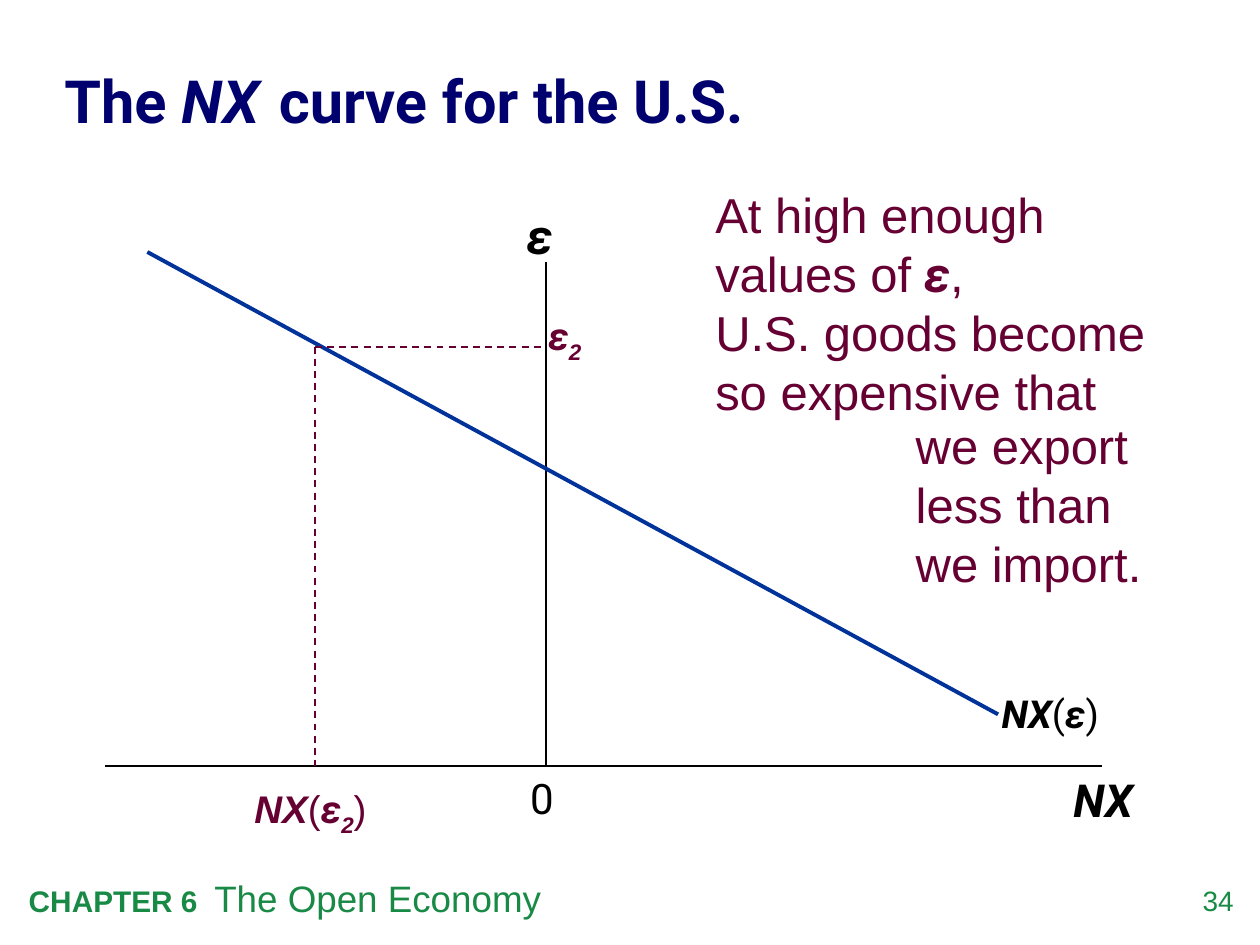
from pptx import Presentation, util as u
from pptx.dml.color import RGBColor
from pptx.enum import dml, shapes, text
from pptx.oxml import ns
from lxml import etree

INK = {"title": "00006E", "foot": "198A46", "axis": "000000",
       "curve": "003399", "mark": "660033"}
HEAD, BODY = "Roboto", "Arial"


def style(para, runs, size, ink, face):
    """Fill a paragraph with (text, marks, face, size) runs, the last two optional."""
    font = para.font
    font.size, font.name = u.Pt(size), face
    font.color.rgb = RGBColor.from_string(INK[ink])
    for words, marks, *rest in runs:
        if words == "\n":
            para.add_line_break()
            continue
        run = para.add_run()
        run.text = words
        run.font.bold, run.font.italic = "b" in marks, "i" in marks
        if rest:
            run.font.name = rest[0]
        if len(rest) > 1:
            run.font.size = u.Pt(rest[1])
        if "s" in marks:
            run._r.get_or_add_rPr().set("baseline", "-25000")


def label(slide, box, runs, size, ink, face=HEAD):
    """Add a wrapped text box and return it."""
    shape = slide.shapes.add_textbox(*map(u.Cm, box))
    shape.text_frame.word_wrap = True
    style(shape.text_frame.paragraphs[0], runs, size, ink, face)
    return shape


def line(slide, start, end, ink, width=1, dash=False):
    """Join two points with a straight line."""
    link = slide.shapes.add_connector(
        shapes.MSO_CONNECTOR.STRAIGHT, *map(u.Cm, (*start, *end)))
    link.line.color.rgb = RGBColor.from_string(INK[ink])
    link.line.width = u.Pt(width)
    if dash:
        link.line.dash_style = dml.MSO_LINE.DASH
    etree.SubElement(link._element.spPr, ns.qn("a:effectLst"))


def head(slide, box):
    """Place the slide title."""
    title = slide.shapes.title
    title.left, title.top, title.width, title.height = map(u.Cm, box)
    frame = title.text_frame
    frame.margin_left = frame.margin_right = 0
    frame.margin_top = frame.margin_bottom = 0
    frame.vertical_anchor = text.MSO_ANCHOR.MIDDLE
    frame.auto_size = text.MSO_AUTO_SIZE.NONE
    para = frame.paragraphs[0]
    para.alignment, para.line_spacing = text.PP_ALIGN.LEFT, 1.05
    style(para, [("The ", "b"), ("NX ", "bi"), (" ", "b", HEAD, 11),
                 ("curve for the U.S.", "b")], 34, "title", HEAD)


def graph(slide, box):
    """Draw the axes, the curve, the marked point and their labels."""
    left, top, wide, high = box

    def at(x, y):
        """Shift a point into the box."""
        return left + x, top + y

    mid, px, py = 8.88, 4.23, 2.97
    line(slide, at(0, high), at(wide, high), "axis")
    line(slide, at(mid, 1.27), at(mid, high), "axis")
    line(slide, at(0.85, 1.06), at(18, 10.38), "curve", 2.25)
    for end in ((mid, py), (px, high)):
        line(slide, at(px, py), at(*end), "mark", dash=True)

    eps, two = ("ε", "bi", HEAD), ("2", "bis", BODY)
    for x, y, w, h, runs, size, ink, face in (
            (8.32, high, 1.27, 1.27, [("0", "")], 24, "axis", HEAD),
            (19.27, high, 1.9, 1.35, [("NX", "bi")], 26, "axis", HEAD),
            (8.24, 0, 1.27, 1.45, [eps], 28, "axis", HEAD),
            (17.82, 9.77, 3.02, 1.2,
             [("NX", "bi"), ("(", ""), eps, (")", "")], 22, "axis", HEAD),
            (8.68, 2.15, 2.54, 1.2, [eps, two], 22, "mark", HEAD),
            (2.76, 11.68, 3.81, 1.2,
             [("NX", "bi"), ("(", ""), eps, two, (")", "")],
             22, "mark", BODY)):
        label(slide, (*at(x, y), w, h), runs, size, ink, face)


def notes(slide, box):
    """Write the remark in two blocks, the second indented past the curve."""
    left, top, wide, high = box
    label(slide, (left, top, wide, 5),
          [("At high enough values of", ""), (" ", "", BODY, 26),
           ("ε", "bi", HEAD), (", ", ""), ("\n", ""),
           ("U.S. goods become so expensive that", "")], 28, "mark", BODY)
    label(slide, (left + 4.04, top + high - 3.81, 5.72, 3.81),
          [("we export less than we import.", "")], 28, "mark", BODY)


def foot(slide, box):
    """Write the chapter name and the page number."""
    left, top, wide, high = box
    label(slide, (left, top, 20.78, high),
          [("CHAPTER 6  ", "b", BODY, 17), ("The Open Economy", "")],
          21, "foot", BODY)
    page = label(slide, (left + wide - 1.4, top + 0.28, 1.4, 0.81),
                 [("34", "")], 16, "foot", BODY)
    frame = page.text_frame
    frame.margin_left = frame.margin_right = 0
    frame.margin_top = frame.margin_bottom = 0
    frame.paragraphs[0].alignment = text.PP_ALIGN.RIGHT


def main():
    """Build and save the slide."""
    deck = Presentation()
    deck.slide_width, deck.slide_height = u.Cm(25.4), u.Cm(19.05)
    slide = deck.slides.add_slide(deck.slide_layouts[5])
    head(slide, (1.3, 0.66, 22.9, 2.62))
    graph(slide, (2.12, 4.02, 20.1, 11.42))
    notes(slide, (14.17, 3.6, 9.53, 8.47))
    foot(slide, (0.33, 17.53, 24.54, 1.14))
    deck.save("out.pptx")


if __name__ == "__main__":
    main()
